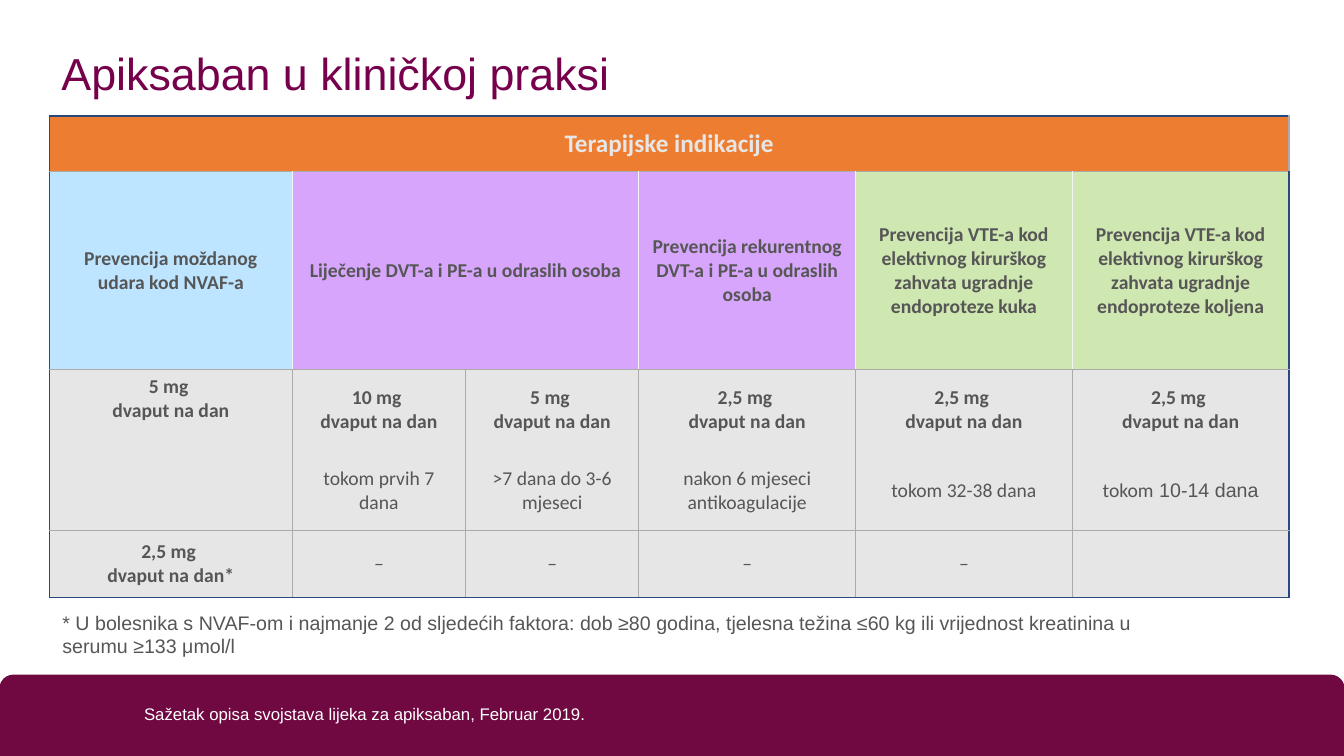
import dataclasses
import typing

import lxml.etree
import pptx
import pptx.dml.color
import pptx.enum.shapes
import pptx.enum.text
import pptx.oxml.ns
import pptx.util

Pt = pptx.util.Pt
qn = pptx.oxml.ns.qn
ANCHOR = pptx.enum.text.MSO_ANCHOR
CENTER = pptx.enum.text.PP_ALIGN.CENTER

PLUM, FOOTER, WHITE, TEXT = "76004B", "700941", "FFFFFF", "565656"
ORANGE, BLUE, VIOLET, GREEN, GREY = "ED7D31", "BDE5FF", "D7A6FC", "CFE7B1", "E7E6E6"
OUTER, INNER, PALE = "27497F", "ABABAB", "F2F2F2"

COLUMNS = [173.5, 123.8, 123.8, 154.8, 154.8, 154.8]
ROWS = [39.6, 141.8, 57.6, 56.9, 48.2]


@dataclasses.dataclass
class Run:
    text: str
    size: float = 14
    color: str = TEXT
    bold: bool = False
    font: str = "Calibri"


@dataclasses.dataclass
class Cell:
    row: int
    column: int
    runs: list[Run]
    fill: str = GREY
    row_span: int = 1
    column_span: int = 1
    anchor: typing.Any = ANCHOR.MIDDLE


@dataclasses.dataclass
class Caption:
    left: float
    top: float
    width: float
    height: float
    run: Run
    inset: float = 8.6
    anchor: typing.Any = ANCHOR.TOP
    spacing: float = 1.0


def rgb(value: str) -> pptx.dml.color.RGBColor:
    return pptx.dml.color.RGBColor.from_string(value)


def apply(target: typing.Any, values: dict[str, typing.Any]) -> None:
    for name, value in values.items():
        setattr(target, name, value)


def write(paragraph: typing.Any, runs: list[Run]) -> None:
    for item in runs:
        for number, line in enumerate(item.text.split("\n")):
            if number:
                paragraph.add_line_break()
            run = paragraph.add_run()
            run.text = line
            apply(run.font, {"name": item.font, "size": Pt(item.size), "bold": item.bold})
            run.font.color.rgb = rgb(item.color)


def draw_caption(slide: typing.Any, caption: Caption) -> None:
    box = slide.shapes.add_textbox(
        Pt(caption.left), Pt(caption.top), Pt(caption.width), Pt(caption.height))
    frame = box.text_frame
    apply(frame, {
        "word_wrap": True, "vertical_anchor": caption.anchor,
        "margin_left": Pt(caption.inset), "margin_right": Pt(caption.inset),
        "margin_top": Pt(4.3), "margin_bottom": Pt(4.3)})
    frame.paragraphs[0].line_spacing = caption.spacing
    write(frame.paragraphs[0], [caption.run])


def border_colors(row: int, column: int) -> dict[str, str | None]:
    """Dark frame, pale dividers between indications, no rule between dose and duration."""
    divider = PALE if row == 1 else INNER
    return {
        "a:lnL": OUTER if column == 0 else divider,
        "a:lnR": OUTER if column == len(COLUMNS) - 1 else divider,
        "a:lnT": OUTER if row == 0 else None if row == 3 else INNER,
        "a:lnB": OUTER if row == len(ROWS) - 1 else None if row == 2 else INNER}


def draw_borders(cell: typing.Any, row: int, column: int) -> None:
    properties = cell._tc.get_or_add_tcPr()
    for side, color in border_colors(row, column).items():
        line = lxml.etree.SubElement(properties, qn(side), w=str(Pt(1)))
        if color is None:
            lxml.etree.SubElement(line, qn("a:noFill"))
        else:
            solid = lxml.etree.SubElement(line, qn("a:solidFill"))
            lxml.etree.SubElement(solid, qn("a:srgbClr"), val=color)


def draw_cell(table: typing.Any, item: Cell) -> None:
    last_row = item.row + item.row_span - 1
    last_column = item.column + item.column_span - 1
    origin = table.cell(item.row, item.column)
    if (last_row, last_column) != (item.row, item.column):
        origin.merge(table.cell(last_row, last_column))
    for row in range(item.row, last_row + 1):
        for column in range(item.column, last_column + 1):
            part = table.cell(row, column)
            draw_borders(part, row, column)
            part.fill.solid()
            part.fill.fore_color.rgb = rgb(item.fill)
    apply(origin, {
        "vertical_anchor": item.anchor, "margin_left": Pt(9.4), "margin_right": Pt(9.4),
        "margin_top": Pt(3.6), "margin_bottom": Pt(3.6)})
    paragraph = origin.text_frame.paragraphs[0]
    apply(paragraph, {"alignment": CENTER})
    paragraph.font.size = Pt(14)
    write(paragraph, item.runs)


def dose(amount: str, mark: str = "") -> list[Run]:
    return [Run(f"{amount} mg \ndvaput na dan{mark}", bold=True)]


def indication(column: int, text: str, fill: str, span: int = 1) -> Cell:
    return Cell(1, column, [Run(text, bold=True)], fill, column_span=span)


HIP_KNEE = "Prevencija VTE-a kod elektivnog kirurškog zahvata ugradnje endoproteze "
DOSES = ["10", "5", "2,5", "2,5", "2,5"]
DURATIONS = [
    [Run("tokom prvih 7 dana")],
    [Run(">7 dana do 3-6 mjeseci")],
    [Run("nakon 6 mjeseci antikoagulacije")],
    [Run("tokom 32-38 dana")],
    [Run("tokom"), Run(" 10-14 dana", font="Arial")]]

CELLS = [
    Cell(0, 0, [Run("Terapijske indikacije", 18, GREY, True)], ORANGE, column_span=6),
    indication(0, "Prevencija moždanog udara kod NVAF-a", BLUE),
    indication(1, "Liječenje DVT-a i PE-a u odraslih osoba", VIOLET, 2),
    indication(3, "Prevencija rekurentnog DVT-a i PE-a u odraslih osoba", VIOLET),
    indication(4, HIP_KNEE + "kuka", GREEN),
    indication(5, HIP_KNEE + "koljena", GREEN),
    Cell(2, 0, dose("5"), row_span=2, anchor=ANCHOR.TOP),
    *[Cell(2, column, dose(amount)) for column, amount in enumerate(DOSES, 1)],
    *[Cell(3, column, duration) for column, duration in enumerate(DURATIONS, 1)],
    Cell(4, 0, dose("2,5", "*")),
    *[Cell(4, column, [Run("–")]) for column in range(1, 5)],
    Cell(4, 5, [])]

CAPTIONS = [
    Caption(35.3, 32.4, 886.3, 67.7,
            Run("Apiksaban u kliničkoj praksi", 32, PLUM, font="Arial"), spacing=0.9),
    Caption(98.6, 474.5, 471.6, 46.8,
            Run("Sažetak opisa svojstava lijeka za apiksaban, Februar 2019.",
                12, WHITE, font="Arial"), 4.3, ANCHOR.BOTTOM, 0.9),
    Caption(36, 432, 823, 36,
            Run("* U bolesnika s NVAF-om i najmanje 2 od sljedećih faktora: dob ≥80 godina, "
                "tjelesna težina ≤60 kg ili vrijednost kreatinina u serumu ≥133 μmol/l",
                font="Arial"))]


def main() -> None:
    deck = pptx.Presentation()
    apply(deck, {"slide_width": Pt(960), "slide_height": Pt(540)})
    slide = deck.slides.add_slide(deck.slide_layouts[6])

    # Footer band
    band = slide.shapes.add_shape(
        pptx.enum.shapes.MSO_SHAPE.ROUND_2_SAME_RECTANGLE, 0, Pt(482.4), Pt(960), Pt(57.6))
    band.shadow.inherit = False
    band.fill.solid()
    band.fill.fore_color.rgb = rgb(FOOTER)
    band.line.color.rgb = rgb(FOOTER)
    band.line.width = Pt(1)

    # Title, source and footnote
    for caption in CAPTIONS:
        draw_caption(slide, caption)

    # Dosing table
    dosing = slide.shapes.add_table(
        len(ROWS), len(COLUMNS), Pt(35.3), Pt(82.8), Pt(sum(COLUMNS)), Pt(sum(ROWS))).table
    apply(dosing, {"first_row": False, "horz_banding": False})
    for column, width in zip(dosing.columns, COLUMNS):
        column.width = Pt(width)
    for row, height in zip(dosing.rows, ROWS):
        row.height = Pt(height)
    for item in CELLS:
        draw_cell(dosing, item)

    deck.save("out.pptx")


if __name__ == "__main__":
    main()
